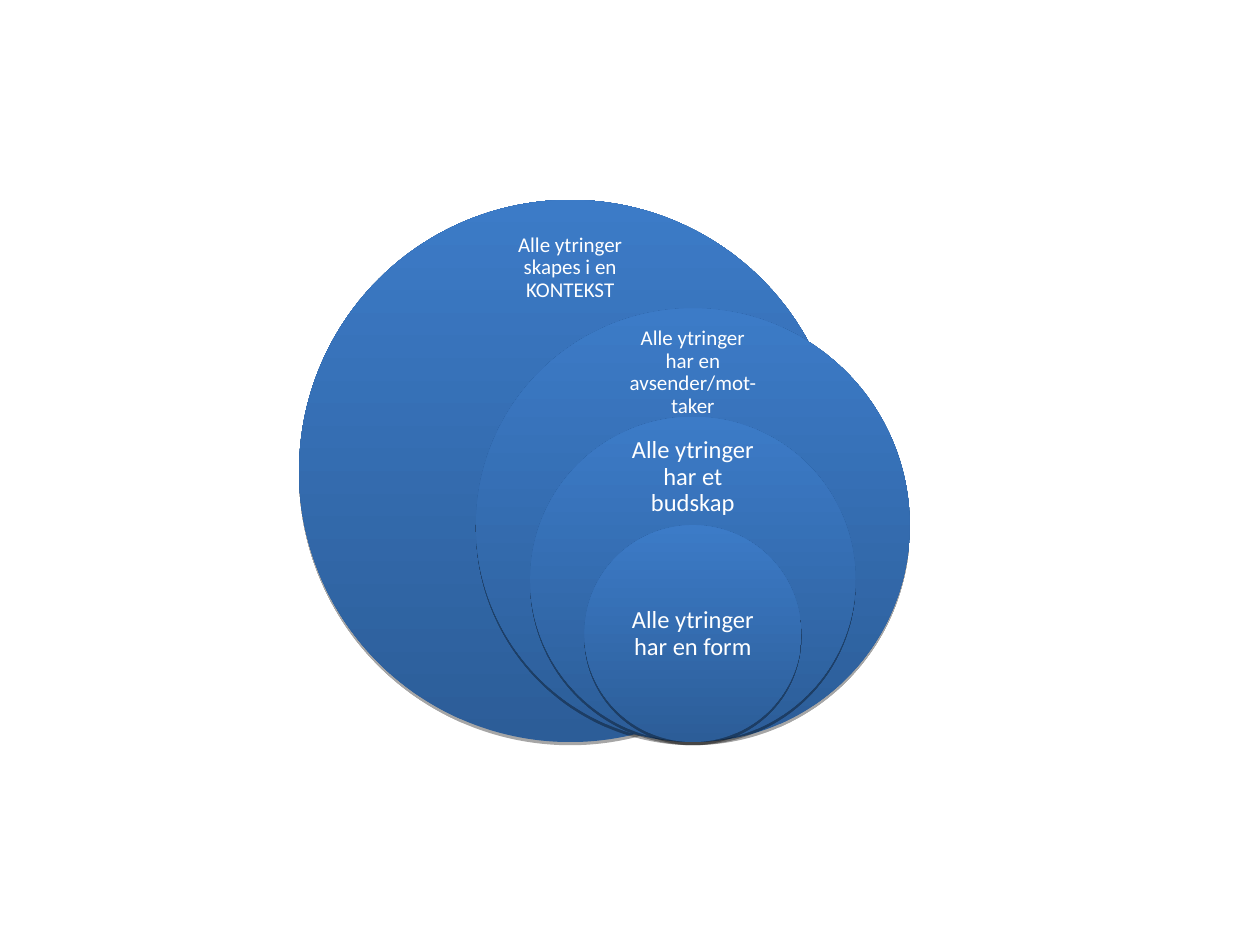
from dataclasses import dataclass

from lxml import etree
from pptx import Presentation
from pptx import util as u
from pptx.dml.color import RGBColor
from pptx.enum import shapes, text
from pptx.oxml.ns import qn


@dataclass(frozen=True)
class Theme:
    """Colours and type shared by the whole slide."""
    dark: str = "2C5D98"
    light: str = "3C7BC7"
    shadow: str = "000000"
    label: str = "FFFFFF"
    font: str = "Calibri"
    small: int = 12
    large: int = 14


THEME = Theme()

LAYERS = [
    ("Alle ytringer skapes i en KONTEKST", THEME.small, 1.37),
    ("Alle ytringer har en avsender/mot-taker", THEME.small, 1.3),
    ("Alle ytringer har et budskap", THEME.large, 1.22),
    ("Alle ytringer har en form", THEME.large, 2.19),
]


def add_drop_shadow(shape):
    """Give the shape a short soft-toned shadow straight below it."""
    shape.shadow.inherit = False
    effects = shape._element.spPr.find(qn("a:effectLst"))
    outer = etree.SubElement(effects, qn("a:outerShdw"), blurRad="0",
                             dist=str(u.Pt(1.8)), dir="5400000", rotWithShape="0")
    colour = etree.SubElement(outer, qn("a:srgbClr"), val=THEME.shadow)
    etree.SubElement(colour, qn("a:alpha"), val="35000")


def add_circle(slide, left, top, diameter):
    """Draw one shaded circle, dark at the bottom and light at the top."""
    circle = slide.shapes.add_shape(shapes.MSO_SHAPE.OVAL, u.Cm(left), u.Cm(top),
                                    u.Cm(diameter), u.Cm(diameter))
    circle.fill.gradient()
    circle.fill.gradient_angle = 90
    for stop, colour in zip(circle.fill.gradient_stops, (THEME.dark, THEME.light)):
        stop.color.rgb = RGBColor.from_string(colour)
    circle.line.fill.background()
    add_drop_shadow(circle)


def add_label(slide, centre_x, centre_y, wording, size, width=2.6, height=2.4):
    """Place a centred label around the given point."""
    label = slide.shapes.add_textbox(u.Cm(centre_x - width / 2), u.Cm(centre_y - height / 2),
                                     u.Cm(width), u.Cm(height))
    frame = label.text_frame
    frame.word_wrap = True
    frame.vertical_anchor = text.MSO_ANCHOR.MIDDLE
    frame.margin_left = frame.margin_right = frame.margin_top = frame.margin_bottom = 0
    paragraph = frame.paragraphs[0]
    paragraph.alignment = text.PP_ALIGN.CENTER
    paragraph.line_spacing = 0.9
    run = paragraph.add_run()
    run.text = wording
    run.font.name = THEME.font
    run.font.size = u.Pt(size)
    run.font.color.rgb = RGBColor.from_string(THEME.label)


def add_stacked_circles(slide, left, top, width, height):
    """Nest the circles on a common base, the inner ones sharing a right-hand axis."""
    inner_axis = left + width - 0.8 * height / 2
    for level, (wording, size, label_drop) in enumerate(LAYERS):
        diameter = height * (1 - 0.2 * level)
        axis = inner_axis if level else left + height / 2
        circle_top = top + height - diameter
        add_circle(slide, axis - diameter / 2, circle_top, diameter)
        add_label(slide, axis, circle_top + label_drop, wording, size)


def main():
    """Build and save the slide."""
    deck = Presentation()
    deck.slide_width, deck.slide_height = u.Cm(25.4), u.Cm(19.05)
    slide = deck.slides.add_slide(deck.slide_layouts[6])
    add_stacked_circles(slide, left=6.03, top=4.03, width=12.31, height=10.93)
    deck.save("out.pptx")


if __name__ == "__main__":
    main()
